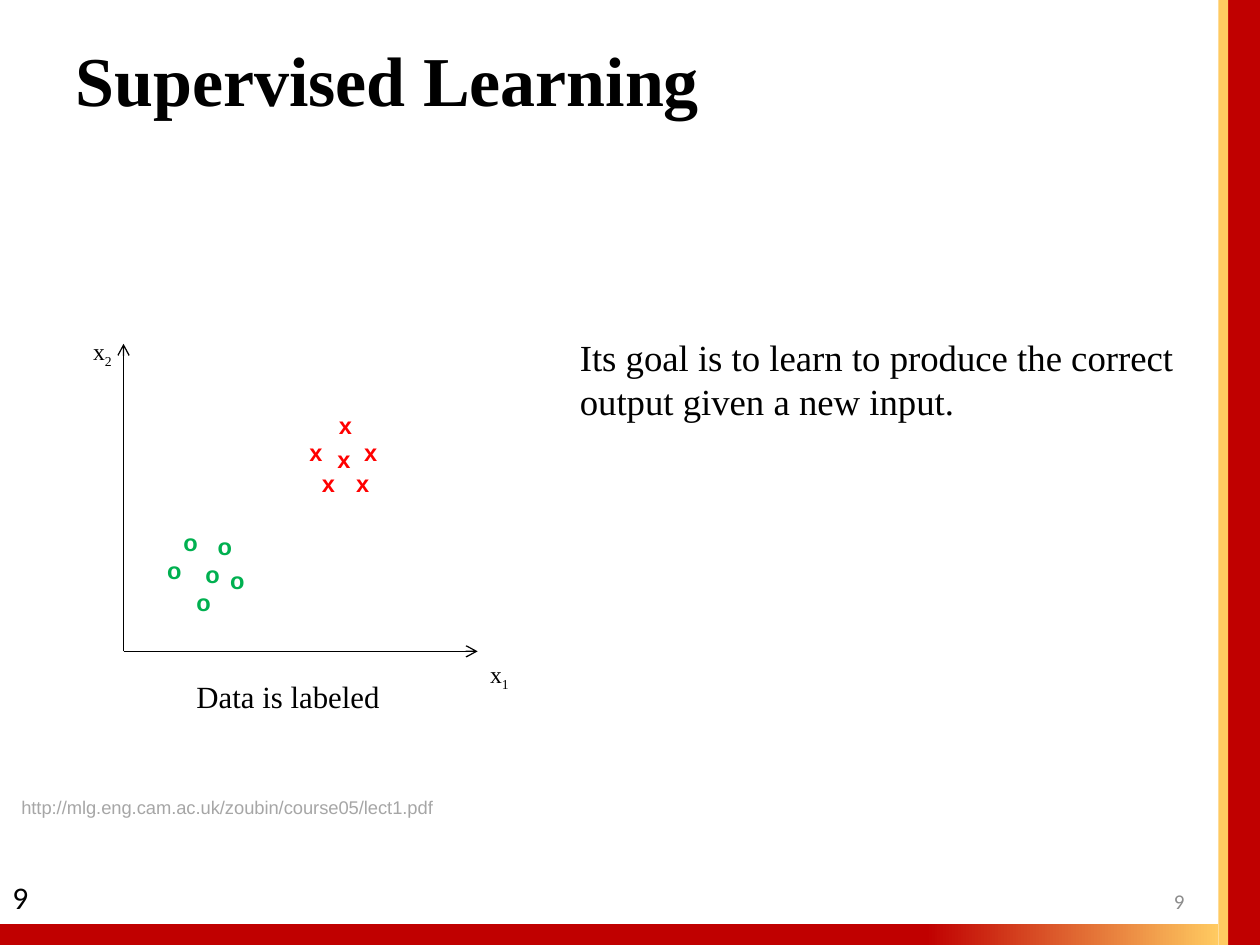
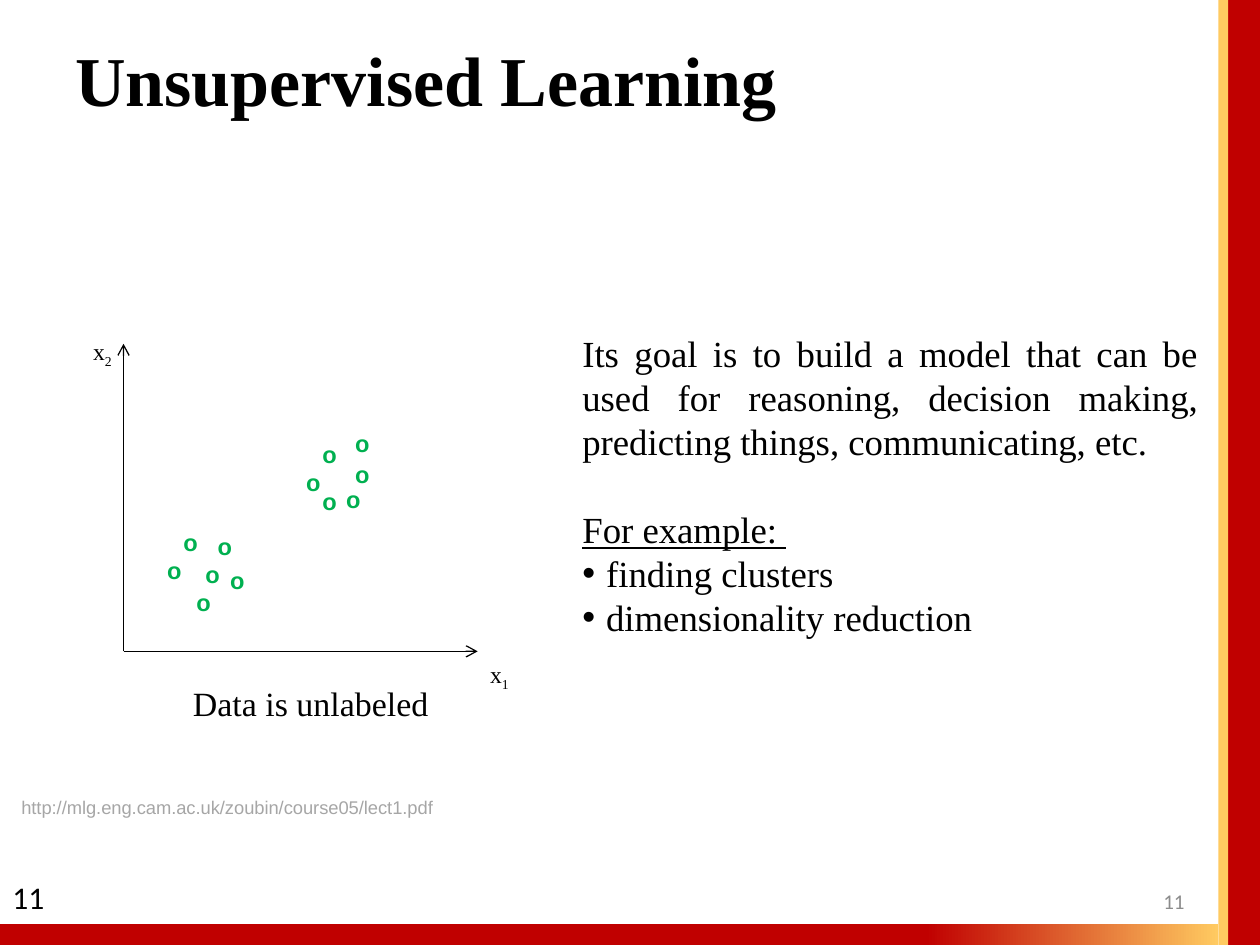
import pptx
import pptx.util
import pptx.dml.color
import pptx.enum.shapes
import pptx.enum.text
import pptx.oxml.ns
from lxml import etree

Cm, Pt = pptx.util.Cm, pptx.util.Pt
ALIGN = pptx.enum.text.PP_ALIGN
ANCHOR = pptx.enum.text.MSO_ANCHOR
qn = pptx.oxml.ns.qn

COLORS = {"red": "C00000", "gold": "FFCA61", "black": "000000", "grey": "A6A6A6",
          "number": "8C8C8C", "cross": "FF0000", "circle": "00B050"}
SERIF, SANS, FOOTER = "Times New Roman", "Arial", "Calibri"
SLIDE_W, SLIDE_H = 25.4, 19.05
RED_W, GOLD_W, BOTTOM_H = 0.64, 0.2, 0.43
MARK_SIZE = (0.81, 0.84)
TIGHT = (0.18, 0.1)
GOAL_PITCH = 25.14
BULLET_INDENT = 0.48

SOURCE = "http://mlg.eng.cam.ac.uk/zoubin/course05/lect1.pdf"
ORIGIN, X_END, Y_END = (2.49, 13.13), (9.63, 13.13), (2.49, 6.93)
AXIS_LABELS = [("2", (1.63, 6.67)), ("1", (9.63, 13.18))]

LOWER_CLUSTER = [(4.39, 11.28), (3.12, 11.07), (3.45, 10.52),
                 (3.71, 11.73), (3.89, 11.15), (4.14, 10.59)]
LABELED_CLUSTER = [(5.99, 8.69), (7.09, 8.69), (6.55, 8.84),
                   (6.24, 9.33), (6.58, 8.15), (6.93, 9.33)]
UNLABELED_CLUSTER = [(6.73, 9.65), (5.92, 9.3), (6.25, 8.74),
                     (6.25, 9.68), (6.91, 8.51), (6.91, 9.14)]

SLIDES = [
    {"number": "9", "title": "Supervised Learning",
     "marks": [("x", "cross", LABELED_CLUSTER), ("o", "circle", LOWER_CLUSTER)],
     "caption": {"text": "Data is labeled", "size": 17.6, "inset": (0.25, 0.13),
                 "spacing": 0.8},
     "goal_at": (11.51, 6.65), "align": ALIGN.LEFT,
     "goal": "Its goal is to learn to produce the correct output given a new input.",
     "examples": []},
    {"number": "11", "title": "Unsupervised Learning",
     "marks": [("o", "circle", LOWER_CLUSTER + UNLABELED_CLUSTER)],
     "caption": {"text": "Data is unlabeled", "size": 19.4, "inset": TIGHT,
                 "spacing": 1.0},
     "goal_at": (11.56, 6.58), "align": ALIGN.JUSTIFY,
     "goal": "Its goal is to build a model that can be used for reasoning, "
             "decision making, predicting things, communicating, etc.",
     "examples": ["finding clusters", "dimensionality reduction"]},
]


def rgb(name):
    return pptx.dml.color.RGBColor.from_string(COLORS[name])


def add_run(p, text, size, font=SERIF, color="black", bold=False):
    r = p.add_run()
    r.text = text
    r.font.size, r.font.name, r.font.bold = Pt(size), font, bold
    r.font.color.rgb = rgb(color)
    return r


def add_box(s, at, size, wrap=False, anchor=ANCHOR.TOP, inset=(0.25, 0.13)):
    """Add an empty text box and return its text frame."""
    tf = s.shapes.add_textbox(*map(Cm, at + size)).text_frame
    tf.word_wrap, tf.vertical_anchor = wrap, anchor
    tf.margin_left = tf.margin_right = Cm(inset[0])
    tf.margin_top = tf.margin_bottom = Cm(inset[1])
    return tf


def add_band(s, left, top, width, height, color):
    sp = s.shapes.add_shape(pptx.enum.shapes.MSO_SHAPE.RECTANGLE,
                            Cm(left), Cm(top), Cm(width), Cm(height))
    sp.shadow.inherit = False
    sp.line.fill.background()
    sp.fill.solid()
    sp.fill.fore_color.rgb = rgb(color)
    return sp


def add_frame(s, title, number):
    """Add what every slide shares: bands, title, source and numbers."""
    red_left = SLIDE_W - RED_W
    gold_left = red_left - GOLD_W
    add_band(s, red_left, 0, RED_W, SLIDE_H, "red")
    add_band(s, gold_left, 0, GOLD_W, SLIDE_H, "gold")
    bottom = add_band(s, 0, SLIDE_H - BOTTOM_H, gold_left, BOTTOM_H, "red")
    bottom.fill.gradient()
    bottom.fill.gradient_angle = 0
    for stop, position, color in zip(bottom.fill.gradient_stops, (0.76, 1), ("red", "gold")):
        stop.position, stop.color.rgb = position, rgb(color)

    tf = add_box(s, (0, 17.58), (1.27, 1.02))
    add_run(tf.paragraphs[0], number, 18, FOOTER)
    tf = add_box(s, (1.27, 0), (22.86, 3.18), True, ANCHOR.MIDDLE)
    add_run(tf.paragraphs[0], title, 40, bold=True)
    tf = add_box(s, (0.18, 15.93), (8.97, 0.71))
    add_run(tf.paragraphs[0], SOURCE, 10.5, SANS, "grey")
    tf = add_box(s, (18.21, 17.65), (5.92, 1.02), True, ANCHOR.MIDDLE)
    tf.paragraphs[0].alignment = ALIGN.RIGHT
    add_run(tf.paragraphs[0], number, 12, FOOTER, "number")


def add_axis(s, end):
    line = s.shapes.add_connector(pptx.enum.shapes.MSO_CONNECTOR.STRAIGHT,
                                  *map(Cm, ORIGIN + end))
    line.line.width = Pt(0.75)
    line.line.color.rgb = rgb("black")
    etree.SubElement(line.line._get_or_add_ln(), qn("a:tailEnd"), type="arrow")
    etree.SubElement(line._element.spPr, qn("a:effectLst"))


def add_plot(s, marks, caption):
    for end in (Y_END, X_END):
        add_axis(s, end)
    for index, at in AXIS_LABELS:
        p = add_box(s, at, (0.91, 0.84)).paragraphs[0]
        add_run(p, "x", 13.5)
        r = add_run(p, index, 13.5)
        r._r.get_or_add_rPr().set("baseline", "-25000")
    for symbol, color, places in marks:
        for at in places:
            tf = add_box(s, at, MARK_SIZE)
            add_run(tf.paragraphs[0], symbol, 13.5, SANS, color, True)
    tf = add_box(s, (3.71, 13.67), (5.33, 1.22), True, inset=caption["inset"])
    tf.paragraphs[0].line_spacing = caption["spacing"]
    add_run(tf.paragraphs[0], caption["text"], caption["size"])


def add_bullet(p):
    pPr = p._p.get_or_add_pPr()
    pPr.set("marL", str(Cm(BULLET_INDENT)))
    pPr.set("indent", str(-Cm(BULLET_INDENT)))
    etree.SubElement(pPr, qn("a:buFont"), typeface=SANS)
    etree.SubElement(pPr, qn("a:buChar"), char="•")


def add_goal(s, at, align, goal, examples):
    tf = add_box(s, at, (12.78, 7.8), True, inset=TIGHT)
    p = tf.paragraphs[0]
    add_run(p, goal, 21)
    if examples:
        p = tf.add_paragraph()
        p.space_before = Pt(GOAL_PITCH)
        add_run(p, "For example: ", 21).font.underline = True
    for example in examples:
        p = tf.add_paragraph()
        add_bullet(p)
        add_run(p, example, 21)
    for p in tf.paragraphs:
        p.alignment, p.line_spacing = align, Pt(GOAL_PITCH)


def main():
    prs = pptx.Presentation()
    prs.slide_width, prs.slide_height = Cm(SLIDE_W), Cm(SLIDE_H)
    for page in SLIDES:
        s = prs.slides.add_slide(prs.slide_layouts[6])
        add_frame(s, page["title"], page["number"])
        add_plot(s, page["marks"], page["caption"])
        add_goal(s, page["goal_at"], page["align"], page["goal"], page["examples"])
    prs.save("out.pptx")


if __name__ == "__main__":
    main()
